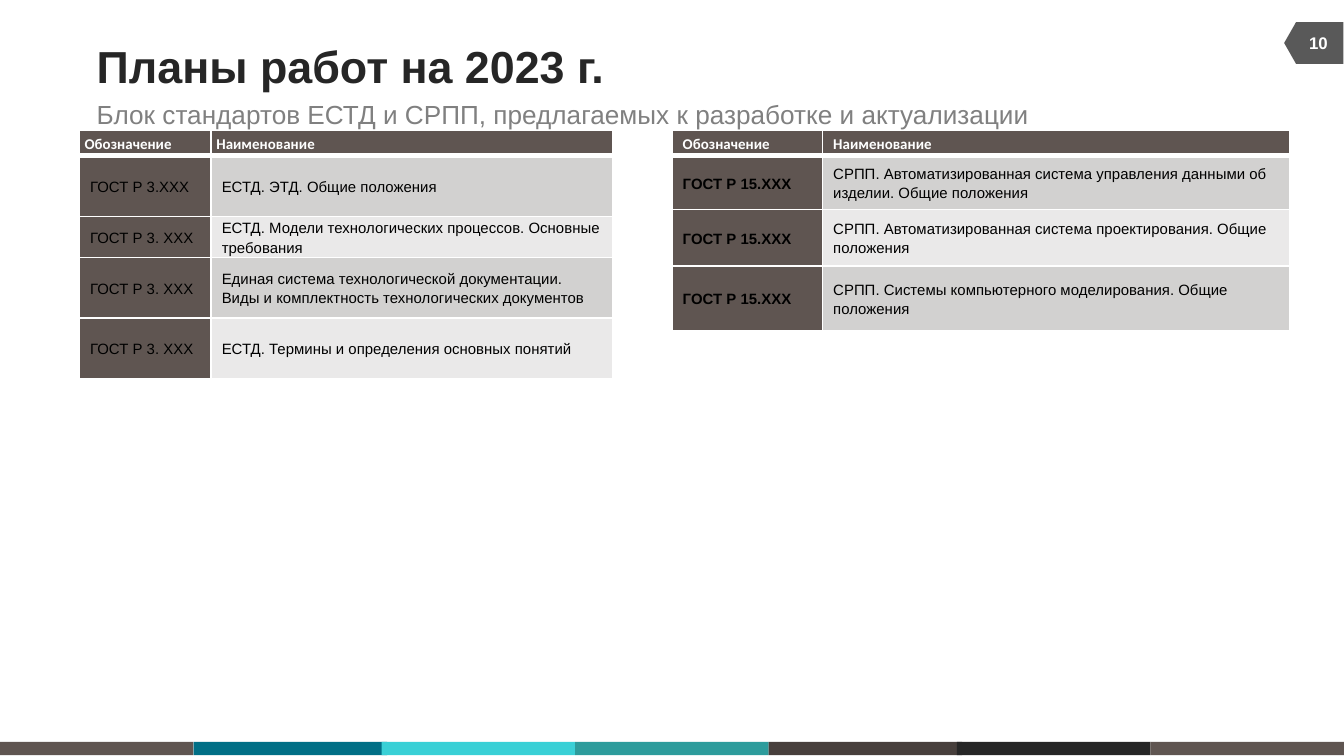
from dataclasses import dataclass

import pptx
import pptx.dml.color
import pptx.enum.shapes
import pptx.enum.text
import pptx.oxml.ns
import pptx.util
from lxml import etree
from pptx.util import Inches

BROWN, WHITE, BLACK = "5F5551", "FFFFFF", "000000"
ROW_FILLS = ("D2D1D0", "EAE9E9")
HEADINGS = ("Обозначение", "Наименование")
BODY_INSET = 0.08
ALIGN = pptx.enum.text.PP_ALIGN
MIDDLE = pptx.enum.text.MSO_ANCHOR.MIDDLE
SHAPES = pptx.enum.shapes.MSO_SHAPE


@dataclass
class TextStyle:
    size: float
    color: str
    bold: bool = False
    font: str = "Arial"


@dataclass
class StandardsTable:
    left: float
    col_widths: tuple[float, ...]
    row_heights: tuple[float, ...]
    header_inset: float
    bold_codes: bool
    standards: tuple[tuple[str, str], ...]


def rgb(color: str) -> pptx.dml.color.RGBColor:
    return pptx.dml.color.RGBColor.from_string(color)


def add_run(paragraph, text: str, style: TextStyle) -> None:
    run = paragraph.add_run()
    run.text = text
    run.font.name = style.font
    run.font.size = pptx.util.Pt(style.size)
    run.font.bold = style.bold
    run.font.color.rgb = rgb(style.color)


def add_block(slide, kind, box: tuple[float, ...], color: str, rotation: float = 0) -> None:
    block = slide.shapes.add_shape(kind, *map(Inches, box))
    block.rotation = rotation
    block.shadow.inherit = False
    block.fill.solid()
    block.fill.fore_color.rgb = rgb(color)
    block.line.fill.background()


def add_label(slide, box: tuple[float, ...], text: str, style: TextStyle,
              align=ALIGN.LEFT) -> None:
    frame = slide.shapes.add_textbox(*map(Inches, box)).text_frame
    frame.word_wrap = True
    frame.vertical_anchor = MIDDLE
    frame.margin_left = frame.margin_right = 0
    frame.margin_top = frame.margin_bottom = 0
    frame.paragraphs[0].alignment = align
    add_run(frame.paragraphs[0], text, style)


def set_border(cell, side: str, points: float) -> None:
    """Draw one white cell edge; side is L, R, T or B."""
    properties = cell._tc.get_or_add_tcPr()
    qn = pptx.oxml.ns.qn
    line = etree.SubElement(properties, qn(f"a:ln{side}"), w=str(pptx.util.Pt(points)))
    fill = etree.SubElement(line, qn("a:solidFill"))
    etree.SubElement(fill, qn("a:srgbClr"), val=WHITE)


def fill_cell(cell, text: str, style: TextStyle, color: str, inset: float,
              top: float, bottom: float) -> None:
    for side, points in (("L", 1), ("R", 1), ("T", top), ("B", bottom)):
        set_border(cell, side, points)
    cell.fill.solid()
    cell.fill.fore_color.rgb = rgb(color)
    cell.vertical_anchor = MIDDLE
    cell.margin_left = cell.margin_right = Inches(inset)
    cell.margin_top = cell.margin_bottom = 0
    paragraph = cell.text_frame.paragraphs[0]
    paragraph.line_spacing = 1.15
    add_run(paragraph, text, style)


def add_standards(slide, data: StandardsTable) -> None:
    table = slide.shapes.add_table(
        len(data.row_heights), len(data.col_widths), Inches(data.left), Inches(0.97),
        Inches(sum(data.col_widths)), Inches(sum(data.row_heights))).table
    table.horz_banding = False
    for column, width in zip(table.columns, data.col_widths):
        column.width = Inches(width)
    for row, height in zip(table.rows, data.row_heights):
        row.height = Inches(height)

    header_style = TextStyle(8, WHITE, True, "Calibri")
    for col, heading in enumerate(HEADINGS):
        fill_cell(table.cell(0, col), heading, header_style, BROWN, data.header_inset, 1, 3)
    code_style = TextStyle(8, BLACK, data.bold_codes)
    for row, (code, name) in enumerate(data.standards, start=1):
        top = 3 if row == 1 else 1
        fill_cell(table.cell(row, 0), code, code_style, BROWN, BODY_INSET, top, 1)
        fill_cell(table.cell(row, 1), name, TextStyle(8, BLACK),
                  ROW_FILLS[(row - 1) % 2], BODY_INSET, top, 1)


STRIPES = ((0, BROWN), (1.44, "016F86"), (2.84, "39D0D6"), (4.28, "2D9C9C"),
           (5.72, "473F3C"), (7.12, "262626"), (8.56, BROWN))

ESTD = StandardsTable(
    0.59, (0.98, 2.99), (0.19, 0.45, 0.23, 0.45, 0.45), 0.04, False,
    (("ГОСТ Р 3.ХХХ", "ЕСТД. ЭТД. Общие положения"),
     ("ГОСТ Р 3. ХХХ", "ЕСТД. Модели технологических процессов. Основные требования"),
     ("ГОСТ Р 3. ХХХ", "Единая система технологической документации. "
                       "Виды и комплектность технологических документов"),
     ("ГОСТ Р 3. ХХХ", "ЕСТД. Термины и определения основных понятий")))

SRPP = StandardsTable(
    5, (1.12, 3.48), (0.19, 0.4, 0.42, 0.48), BODY_INSET, True,
    (("ГОСТ Р 15.XХХ", "СРПП. Автоматизированная система управления данными об изделии. "
                       "Общие положения"),
     ("ГОСТ Р 15.XХХ", "СРПП. Автоматизированная система проектирования. Общие положения"),
     ("ГОСТ Р 15.XХХ", "СРПП. Системы компьютерного моделирования. Общие положения")))


def main() -> None:
    deck = pptx.Presentation()
    deck.slide_width = Inches(10)
    deck.slide_height = deck.slide_width * 9 // 16
    slide = deck.slides.add_slide(deck.slide_layouts[6])

    for left, color in STRIPES:
        add_block(slide, SHAPES.RECTANGLE, (left, 5.52, 1.44, 0.1), color)
    add_block(slide, SHAPES.FLOWCHART_OFFPAGE_CONNECTOR, (9.62, 0.1, 0.31, 0.44), "595959", 90)

    add_label(slide, (0.72, 0.29, 6.17, 0.39), "Планы работ на 2023 г.",
              TextStyle(24, "262626", True))
    add_label(slide, (0.72, 0.73, 9.36, 0.24),
              "Блок стандартов ЕСТД и СРПП, предлагаемых к разработке и актуализации",
              TextStyle(14, "808080"))
    add_label(slide, (9.6, 0.17, 0.42, 0.3), "10", TextStyle(9, WHITE, True), ALIGN.CENTER)

    for standards in (ESTD, SRPP):
        add_standards(slide, standards)
    deck.save("out.pptx")


if __name__ == "__main__":
    main()
